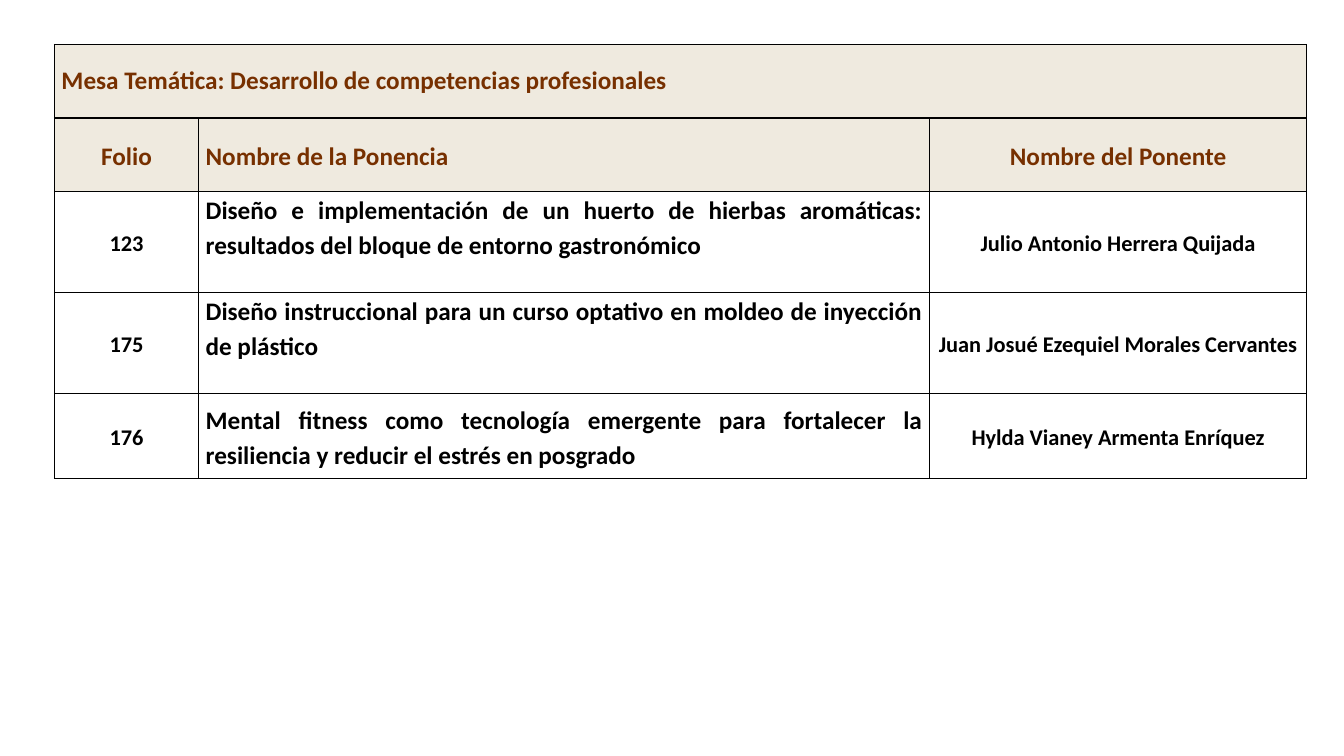
from dataclasses import dataclass

from lxml.etree import SubElement
from pptx import Presentation
from pptx.dml.color import RGBColor
from pptx.enum.text import MSO_ANCHOR, PP_ALIGN
from pptx.oxml.ns import qn
from pptx.table import _Cell
from pptx.util import Inches, Pt


@dataclass(frozen=True)
class Theme:
    font: str = "Calibri"
    ink: str = "000000"
    brown: str = "773000"
    sand: str = "EFEADF"
    large: int = 18
    small: int = 16
    border: float = 1


@dataclass(frozen=True)
class Talk:
    folio: str
    title: str
    speaker: str
    height: float
    anchor: MSO_ANCHOR


THEME = Theme()
TOPIC = "Mesa Temática: Desarrollo de competencias profesionales"
HEADS = ("Folio", "Nombre de la Ponencia", "Nombre del Ponente")
WIDTHS = (1.43, 7.25, 3.74)
ALIGNS = (PP_ALIGN.CENTER, PP_ALIGN.JUSTIFY, PP_ALIGN.CENTER)
HEAD_HEIGHT = 0.73
TALKS = (
    Talk("123", "Diseño e implementación de un huerto de hierbas aromáticas: "
         "resultados del bloque de entorno gastronómico",
         "Julio Antonio Herrera Quijada", 1.0, MSO_ANCHOR.TOP),
    Talk("175", "Diseño instruccional para un curso optativo en moldeo de "
         "inyección de plástico",
         "Juan Josué Ezequiel Morales Cervantes", 1.0, MSO_ANCHOR.TOP),
    Talk("176", "Mental fitness como tecnología emergente para fortalecer la "
         "resiliencia y reducir el estrés en posgrado",
         "Hylda Vianey Armenta Enríquez", 0.85, MSO_ANCHOR.MIDDLE),
)


def add_border(cell: _Cell) -> None:
    props = cell._tc.get_or_add_tcPr()
    for side in ("a:lnL", "a:lnR", "a:lnT", "a:lnB"):
        line = SubElement(props, qn(side), w=str(Pt(THEME.border)))
        fill = SubElement(line, qn("a:solidFill"))
        SubElement(fill, qn("a:srgbClr"), val=THEME.ink)


def write(cell: _Cell, text: str, size: int, color: str, align: PP_ALIGN,
          spacing: float, anchor: MSO_ANCHOR = MSO_ANCHOR.MIDDLE) -> None:
    cell.text = text
    cell.vertical_anchor = anchor
    cell.margin_left = cell.margin_right = Inches(0.07)
    cell.margin_top = cell.margin_bottom = Inches(0)
    para = cell.text_frame.paragraphs[0]
    para.alignment = align
    para.line_spacing = spacing
    para.font.name = THEME.font
    para.font.size = Pt(size)
    para.font.bold = True
    para.font.color.rgb = RGBColor.from_string(color)


def main() -> None:
    deck = Presentation()
    deck.slide_width, deck.slide_height = Inches(13.33), Inches(7.5)
    slide = deck.slides.add_slide(deck.slide_layouts[6])

    heights = [HEAD_HEIGHT] * 2 + [talk.height for talk in TALKS]
    table = slide.shapes.add_table(
        len(heights), len(WIDTHS), Inches(0.54), Inches(0.44),
        Inches(sum(WIDTHS)), Inches(sum(heights))).table
    table.first_row = table.horz_banding = False
    for column, width in zip(table.columns, WIDTHS):
        column.width = Inches(width)
    for index, height in enumerate(heights):
        table.rows[index].height = Inches(height)
        for cell in table.rows[index].cells:
            add_border(cell)
            if index < 2:
                cell.fill.solid()
                cell.fill.fore_color.rgb = RGBColor.from_string(THEME.sand)
            else:
                cell.fill.background()

    topic = table.cell(0, 0)
    topic.merge(table.cell(0, len(WIDTHS) - 1))
    write(topic, TOPIC, THEME.large, THEME.brown, PP_ALIGN.JUSTIFY, 1.0)
    for col, (head, align) in enumerate(zip(HEADS, ALIGNS)):
        write(table.cell(1, col), head, THEME.large, THEME.brown, align, 1.15)
    for row, talk in enumerate(TALKS, start=2):
        folio, title, speaker = table.rows[row].cells
        for cell, text in ((folio, talk.folio), (speaker, talk.speaker)):
            write(cell, text, THEME.small, THEME.ink, PP_ALIGN.CENTER, 1.14)
        write(title, talk.title, THEME.large, THEME.ink, PP_ALIGN.JUSTIFY,
              1.14, talk.anchor)

    deck.save("out.pptx")


if __name__ == "__main__":
    main()
